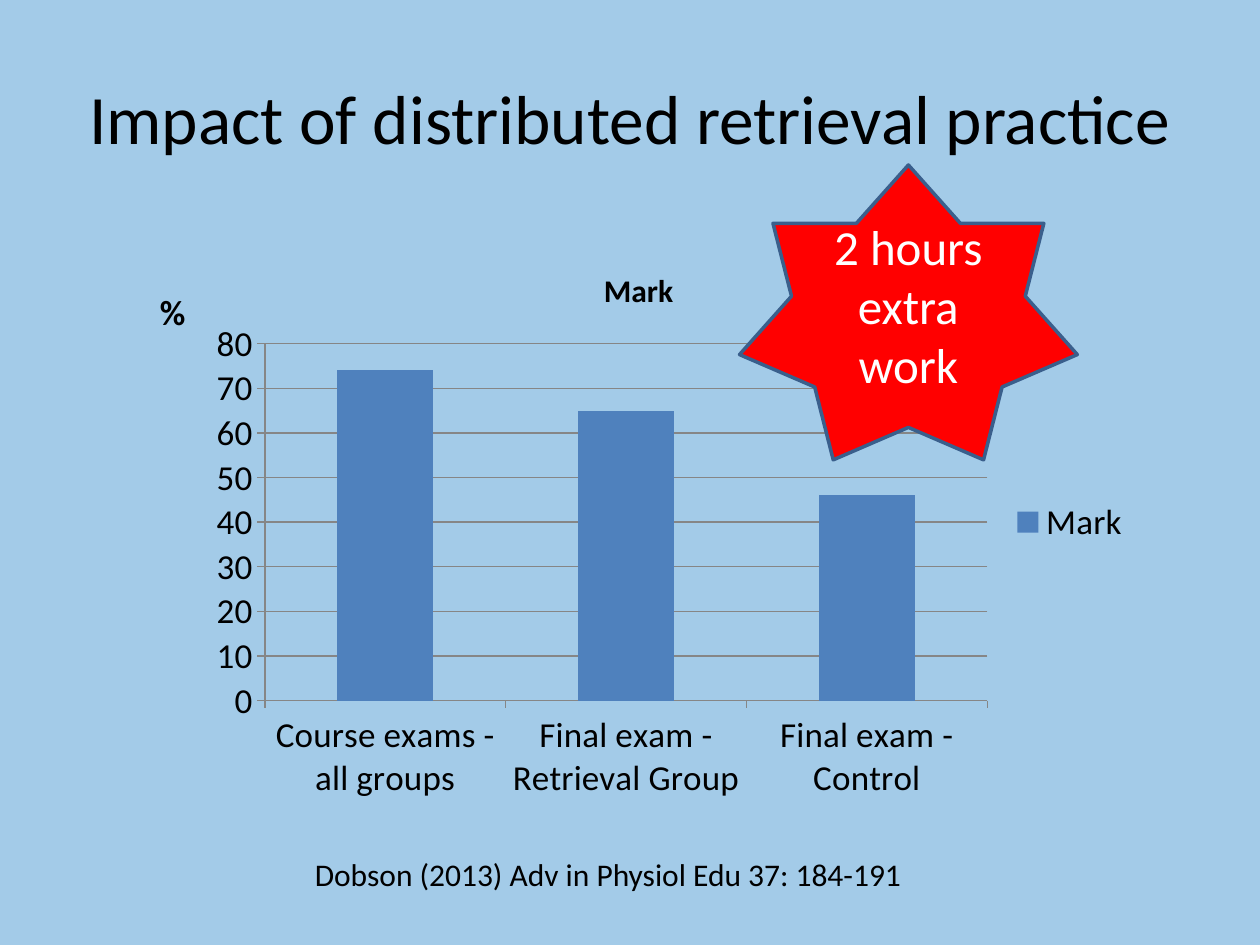
from lxml import etree
from pptx import Presentation
from pptx.chart.data import CategoryChartData
from pptx.dml.color import RGBColor
from pptx.enum import chart as charts, shapes, text
from pptx.oxml.ns import qn
from pptx.util import Pt

FONT = "Calibri"
BLACK = RGBColor(0x00, 0x00, 0x00)
WHITE = RGBColor(0xFF, 0xFF, 0xFF)
RED = RGBColor(0xFF, 0x00, 0x00)
PALE_BLUE = RGBColor(0xA3, 0xCB, 0xE8)
BAR_BLUE = RGBColor(0x4F, 0x81, 0xBD)
OUTLINE_BLUE = RGBColor(0x3A, 0x5F, 0x8C)
GRID_GREY = RGBColor(0x86, 0x86, 0x86)


def write_text(shape, wording, size, color, alignment, anchor):
    frame = shape.text_frame
    frame.text = wording
    frame.vertical_anchor = anchor
    paragraph = frame.paragraphs[0]
    paragraph.alignment = alignment
    paragraph.font.name = FONT
    paragraph.font.size = Pt(size)
    paragraph.font.color.rgb = color


def place(element, index, **settings):
    """Give a chart part a manual layout, in fractions of the chart."""
    for old_layout in element.findall(qn("c:layout")):
        element.remove(old_layout)
    layout = etree.Element(qn("c:layout"))
    manual = etree.SubElement(layout, qn("c:manualLayout"))
    for name, value in settings.items():
        etree.SubElement(manual, qn(f"c:{name}")).set("val", str(value))
    element.insert(index, layout)


presentation = Presentation()
presentation.slide_width, presentation.slide_height = Pt(720), Pt(540)
slide = presentation.slides.add_slide(presentation.slide_layouts[6])
slide.background.fill.solid()
slide.background.fill.fore_color.rgb = PALE_BLUE

title = slide.shapes.add_textbox(Pt(36), Pt(21.6), Pt(648), Pt(90))
title.text_frame.word_wrap = True
write_text(title, "Impact of distributed retrieval practice", 39.6, BLACK,
           text.PP_ALIGN.CENTER, text.MSO_ANCHOR.MIDDLE)

# Chart of exam marks
marks = CategoryChartData(number_format="General")
marks.categories = ["Course exams - all groups", "Final exam - Retrieval Group",
                    "Final exam - Control"]
marks.add_series("Mark", [74, 65, 46])
chart = slide.shapes.add_chart(
    charts.XL_CHART_TYPE.COLUMN_CLUSTERED,
    Pt(76.3), Pt(133.9), Pt(577.4), Pt(329), marks).chart
chart.font.name = FONT
chart.font.size = Pt(20)
chart.font.color.rgb = BLACK

plot = chart.plots[0]
plot.gap_width = 150
plot.vary_by_categories = False
bars = plot.series[0].format.fill
bars.solid()
bars.fore_color.rgb = BAR_BLUE

chart.has_legend = True
chart.legend.position = charts.XL_LEGEND_POSITION.RIGHT
chart.legend.include_in_layout = False
chart.legend.font.size = Pt(20)

value_axis = chart.value_axis
value_axis.minimum_scale, value_axis.maximum_scale = 0, 80
value_axis.major_unit = 10
value_axis.has_major_gridlines = True
for axis in (chart.category_axis, value_axis):
    axis.major_tick_mark = charts.XL_TICK_MARK.OUTSIDE
    axis.tick_labels.font.size = Pt(20)
for lines in (chart.category_axis, value_axis, value_axis.major_gridlines):
    lines.format.line.color.rgb = GRID_GREY
    lines.format.line.width = Pt(0.75)

for owner, wording, size in ((chart.chart_title, "Mark", 18),
                             (value_axis.axis_title, "%", 20)):
    owner.text_frame.text = wording
    font = owner.text_frame.paragraphs[0].font
    font.name = FONT
    font.size = Pt(size)
    font.bold = True
    font.color.rgb = BLACK

chart_space = chart.element if hasattr(chart, "element") else chart._chartSpace
chart_title = chart_space.find(".//" + qn("c:chart")).find(qn("c:title"))
axis_title = chart_space.find(".//" + qn("c:valAx")).find(qn("c:title"))
axis_title.find(".//" + qn("a:bodyPr")).set("rot", "0")
axis_title.find(".//" + qn("a:bodyPr")).set("vert", "horz")
place(chart_title, 1, xMode="edge", yMode="edge", x=0.46, y=0.05)
place(axis_title, 1, xMode="edge", yMode="edge", x=0.02, y=0.08)
place(chart_space.find(".//" + qn("c:plotArea")), 0, layoutTarget="inner",
      xMode="edge", yMode="edge", x=0.13, y=0.19, w=0.715, h=0.62)

citation = slide.shapes.add_textbox(Pt(172.8), Pt(485.3), Pt(353.5), Pt(28.8))
citation.text_frame.word_wrap = False
write_text(citation, "Dobson (2013) Adv in Physiol Edu 37: 184-191", 18, BLACK,
           text.PP_ALIGN.LEFT, text.MSO_ANCHOR.TOP)

star = slide.shapes.add_shape(shapes.MSO_SHAPE.STAR_7_POINT,
                              Pt(422.6), Pt(94.3), Pt(193), Pt(168.5))
star.shadow.inherit = False
star.fill.solid()
star.fill.fore_color.rgb = RED
star.line.color.rgb = OUTLINE_BLUE
star.line.width = Pt(2)
write_text(star, "2 hours extra work", 28, WHITE,
           text.PP_ALIGN.CENTER, text.MSO_ANCHOR.MIDDLE)

presentation.save("out.pptx")
